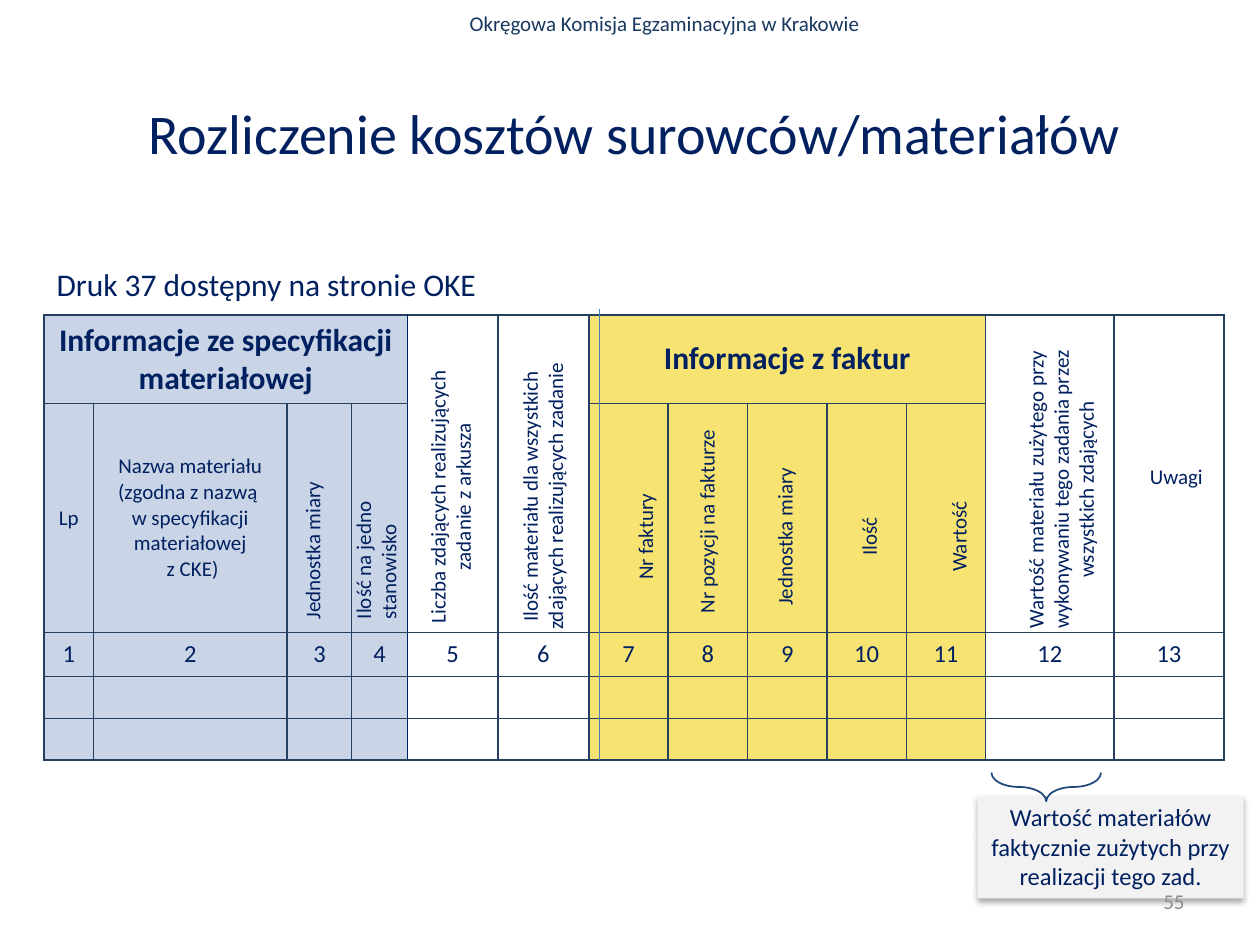
from dataclasses import dataclass
from lxml.etree import SubElement
from pptx import Presentation
from pptx.dml.color import RGBColor as Rgb
from pptx.enum.shapes import MSO_CONNECTOR as Link, MSO_SHAPE as Shape
from pptx.enum.text import MSO_ANCHOR as Anchor, PP_ALIGN as Align
from pptx.oxml.ns import qn
from pptx.util import Cm, Pt


@dataclass(frozen=True)
class Theme:
    font: str = "Calibri"
    text: str = "002060"
    head: str = "17375E"
    edge: str = "254061"
    rule: str = "4B7EBC"
    brace: str = "1F497D"
    blue: str = "C9D4E6"
    gold: str = "F6E372"
    note: str = "F2F2F2"
    grey: str = "8C8C8C"
    small: int = 12
    mid: int = 14
    large: int = 18
    title: int = 32


T = Theme()
COLS = [0.99, 3.91, 1.3, 1.12, 1.83, 1.83] + [1.6] * 5 + [2.59, 2.21]
ROWS = [1.78, 4.62, 0.89, 0.84, 0.84]
SPANS = [(0, 0, 0, 3), (0, 6, 0, 10)] + [(0, c, 1, c) for c in (4, 5, 11, 12)]

# text, centre x, centre y, length, thickness, alignment
HEADS = [
    ("Jednostka miary", 6.29, 10.54, 4.39, 0.76, Align.LEFT),
    ("Ilość na jedno stanowisko", 7.57, 10.34, 4.78, 1.27, Align.LEFT),
    ("Liczba zdających realizujących zadanie z arkusza",
     9.07, 10.01, 6.6, 1.27, Align.CENTER),
    ("Ilość materiału dla wszystkich zdających realizujących zadanie",
     10.93, 10.01, 6.78, 1.27, Align.CENTER),
    ("Nr faktury", 13, 10.82, 5.18, 0.76, Align.CENTER),
    ("Nr pozycji na fakturze", 14.24, 10.52, 4.39, 0.76, Align.CENTER),
    ("Jednostka miary", 15.81, 10.82, 4.39, 0.76, Align.CENTER),
    ("Ilość", 17.51, 10.82, 4.39, 0.76, Align.CENTER),
    ("Wartość", 19.32, 10.82, 4.39, 0.76, Align.CENTER),
    ("Wartość materiału zużytego przy wykonywaniu tego zadania przez "
     "wszystkich zdających", 21.39, 9.87, 6.3, 1.8, Align.CENTER),
]


class Page:
    def __init__(self, slide, theme):
        self.slide = slide
        self.theme = theme

    def fill_in(self, frame, lines, size, color=None, align=Align.CENTER,
                bold=False):
        """Fill a text frame, one paragraph per line."""
        frame.word_wrap = True
        for i, line in enumerate(lines):
            para = frame.add_paragraph() if i else frame.paragraphs[0]
            para.add_run().text = line
            para.alignment = align
            font = para.font
            font.name, font.size, font.bold = self.theme.font, Pt(size), bold
            font.color.rgb = Rgb.from_string(color or self.theme.text)

    def text(self, words, box, size, color=None, align=Align.CENTER,
             anchor=Anchor.TOP):
        item = self.slide.shapes.add_textbox(*map(Cm, box))
        item.text_frame.vertical_anchor = anchor
        self.fill_in(item.text_frame, [words], size, color, align)
        return item

    def upright(self, words, x, y, length, thick, align):
        """Add a label that reads from bottom to top."""
        box = (x - length / 2, y - thick / 2, length, thick)
        self.text(words, box, self.theme.small, align=align).rotation = 270

    def callout(self, words, box):
        item = self.slide.shapes.add_shape(Shape.RECTANGLE, *map(Cm, box))
        item.fill.solid()
        item.fill.fore_color.rgb = Rgb.from_string(self.theme.note)
        item.line.fill.background()
        item.shadow.inherit = False
        glow = SubElement(
            item._element.spPr.find(qn("a:effectLst")), qn("a:outerShdw"),
            blurRad=str(Pt(3.5)), dist=str(Pt(2.2)), dir="5400000")
        tint = SubElement(glow, qn("a:srgbClr"), val="000000")
        SubElement(tint, qn("a:alpha"), val="32000")
        item.text_frame.vertical_anchor = Anchor.TOP
        self.fill_in(item.text_frame, [words], self.theme.mid)

    def brace(self, box):
        item = self.slide.shapes.add_shape(Shape.RIGHT_BRACE, *map(Cm, box))
        item.rotation = 90
        item.adjustments[0], item.adjustments[1] = 1.03, 0.5
        item.shadow.inherit = False
        item.fill.background()
        item.line.color.rgb = Rgb.from_string(self.theme.brace)
        item.line.width = Pt(1)

    def line(self, *ends):
        item = self.slide.shapes.add_connector(Link.STRAIGHT, *map(Cm, ends))
        item.line.color.rgb = Rgb.from_string(self.theme.rule)
        item.line.width = Pt(0.75)
        SubElement(item._element.spPr, qn("a:effectLst"))

    def border(self, cell, side, color):
        props = cell._tc.get_or_add_tcPr()
        edge = SubElement(props, qn(f"a:ln{side}"), w=str(Pt(1)))
        fill = SubElement(edge, qn("a:solidFill"))
        SubElement(fill, qn("a:srgbClr"), val=color)

    def paint(self, cell, row, col):
        """Set the borders and fill that a cell has by its place."""
        theme = self.theme
        strong = {3: "R", 4: "L"}.get(col)
        for side in "LRTB":
            self.border(cell, side,
                        theme.text if side == strong else theme.edge)
        tint = theme.blue if col < 4 else theme.gold if 6 <= col < 11 else None
        if tint:
            cell.fill.solid()
            cell.fill.fore_color.rgb = Rgb.from_string(tint)
        else:
            cell.fill.background()
        if row > 2:
            cell.margin_top = cell.margin_bottom = 0

    def table(self, left, top):
        theme = self.theme
        grid = self.slide.shapes.add_table(
            len(ROWS), len(COLS), Cm(left), Cm(top),
            Cm(sum(COLS)), Cm(sum(ROWS))).table
        grid.first_row = grid.horz_banding = False
        for col, width in zip(grid.columns, COLS):
            col.width = Cm(width)
        for row, height in zip(grid.rows, ROWS):
            row.height = Cm(height)
        for r in range(len(ROWS)):
            for c in range(len(COLS)):
                self.paint(grid.cell(r, c), r, c)
        for r, c, last, end in SPANS:
            grid.cell(r, c).merge(grid.cell(last, end))

        def put(r, c, lines, size, bold=False, anchor=Anchor.MIDDLE):
            cell = grid.cell(r, c)
            cell.vertical_anchor = anchor
            self.fill_in(cell.text_frame, lines, size, bold=bold)

        put(0, 0, ["Informacje ze specyfikacji materiałowej"], theme.large,
            True, Anchor.TOP)
        put(0, 6, ["Informacje z faktur"], theme.large, True)
        put(1, 0, ["Lp"], theme.small)
        put(1, 1, ["Nazwa materiału (zgodna z nazwą ",
                   "w specyfikacji materiałowej", " z CKE)"], theme.small)
        for c in range(len(COLS)):
            put(2, c, [str(c + 1)], theme.mid)


def main():
    deck = Presentation()
    deck.slide_width, deck.slide_height = Cm(25.4), Cm(19.05)
    page = Page(deck.slides.add_slide(deck.slide_layouts[6]), T)
    page.text("Okręgowa Komisja Egzaminacyjna w Krakowie",
              (2.9, 0.08, 21, 0.76), T.small, T.head)
    page.text("Rozliczenie kosztów surowców/materiałów ",
              (1.7, 1.07, 22.43, 3.18), T.title, anchor=Anchor.MIDDLE)
    page.text("Druk 37 dostępny na stronie OKE",
              (0.89, 5.21, 22.43, 0.91), T.large, align=Align.LEFT)
    page.callout("Wartość materiałów faktycznie zużytych przy realizacji "
                 "tego zad.", (19.71, 16.05, 5.36, 2.06))
    page.table(0.89, 6.35)
    for head in HEADS:
        page.upright(*head)
    page.text("Uwagi", (22.71, 9.22, 2.01, 0.76), T.small)
    page.line(12.09, 6.22, 12.09, 15.32)
    page.brace((20.8, 14.76, 0.58, 2.21))
    page.text("55", (18.21, 17.65, 5.92, 1.02), T.small, T.grey,
              Align.RIGHT, Anchor.MIDDLE)
    deck.save("out.pptx")


if __name__ == "__main__":
    main()
